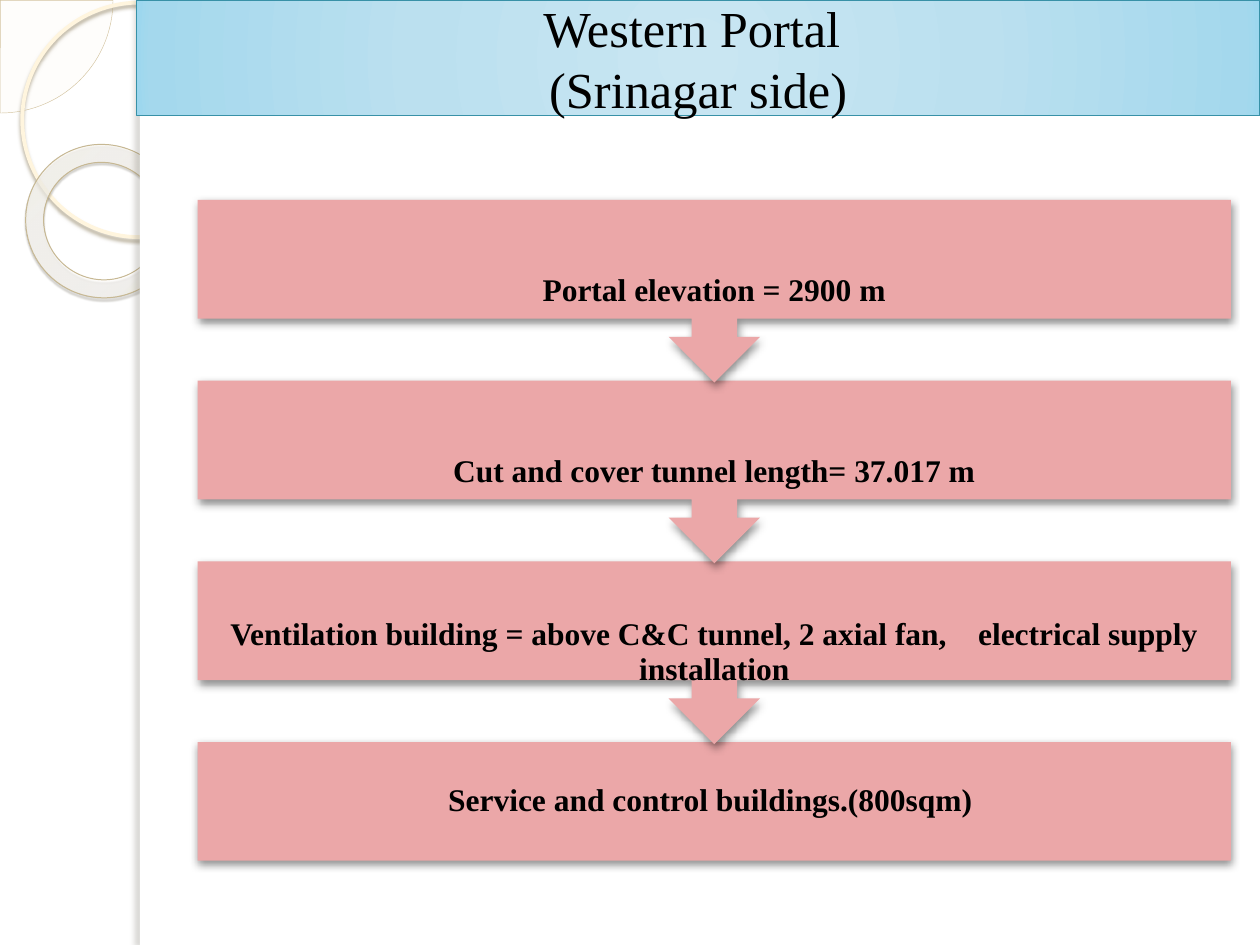
from dataclasses import dataclass
from lxml.etree import SubElement
from pptx import Presentation
from pptx.dml.color import RGBColor
from pptx.enum.shapes import MSO_SHAPE as Shape
from pptx.enum.text import MSO_ANCHOR as Anchor, PP_ALIGN as Align
from pptx.oxml.ns import qn
from pptx.util import Pt


@dataclass(frozen=True)
class Theme:
    font: str = "Times New Roman"
    title_size: float = 28.8
    body_size: float = 18
    text: str = "000000"
    paper: str = "FFFFFF"
    step: str = "EBA7A8"
    title_line: str = "3891A7"
    title_stops: tuple = ((0, "C9E6F2", 100), (50, "BBE0EF", 100),
                          (97, "A4D8ED", 100), (100, "9BD7EE", 100))
    pie: str = "FEFAF4"
    pie_line: str = "D3C39F"
    ring_line: str = "FFF5DE"
    donut_stops: tuple = ((0, "FFFCF6", 70), (70, "FFFEFB", 55), (100, "F0D28E", 60))
    donut_line: str = "C7B893"
    ring_shadow: tuple = ("B0A68F", 85, 2, 2, 90)
    donut_shadow: tuple = ("5A5444", 35, 1, 1.2, 75)
    edge_shadow: tuple = ("736F63", 25, 3, 3, 180)
    step_shadow: tuple = ("000000", 43, 5, 2, 90)


class SlideBuilder:
    def __init__(self, slide, theme):
        self.slide = slide
        self.theme = theme

    def add_color(self, parent, color, opacity):
        node = SubElement(parent, qn("a:srgbClr"), val=color)
        if opacity < 100:
            SubElement(node, qn("a:alpha"), val=str(opacity * 1000))

    def shape(self, kind, box, fill=None, opacity=100, line=None, shadow=None,
              adjustments=(), rotation=0):
        shape = self.slide.shapes.add_shape(kind, *map(Pt, box))
        shape.shadow.inherit = False
        shape.rotation = rotation
        for index, value in enumerate(adjustments):
            shape.adjustments[index] = value
        if fill:
            shape.fill.solid()
            solid = shape._element.spPr.find(qn("a:solidFill"))
            solid.clear()
            self.add_color(solid, fill, opacity)
        else:
            shape.fill.background()
        if line:
            color, width = line
            shape.line.color.rgb = RGBColor.from_string(color)
            shape.line.width = Pt(width)
        else:
            shape.line.fill.background()
        if shadow:
            self.shadow(shape, *shadow)
        return shape

    def shadow(self, shape, color, opacity, blur, distance, angle):
        effects = shape._element.spPr.find(qn("a:effectLst"))
        outer = SubElement(effects, qn("a:outerShdw"), blurRad=str(Pt(blur)),
                           dist=str(Pt(distance)), dir=str(angle * 60000),
                           rotWithShape="0")
        self.add_color(outer, color, opacity)

    def gradient(self, shape, stops, focus):
        properties = shape._element.spPr
        gradient = SubElement(properties, qn("a:gradFill"), rotWithShape="1")
        stop_list = SubElement(gradient, qn("a:gsLst"))
        for position, color, opacity in stops:
            stop = SubElement(stop_list, qn("a:gs"), pos=str(position * 1000))
            self.add_color(stop, color, opacity)
        circle = SubElement(gradient, qn("a:path"), {"path": "circle"})
        sides = {side: str(value * 1000) for side, value in zip("ltrb", focus)}
        SubElement(circle, qn("a:fillToRect"), sides)
        properties.replace(properties.find(qn("a:noFill")), gradient)

    def set_text(self, shape, text, size, bold=False, margin=0, spacing=1):
        frame = shape.text_frame
        frame_format = {"word_wrap": True, "vertical_anchor": Anchor.MIDDLE}
        for side in ("left", "top", "right", "bottom"):
            frame_format[f"margin_{side}"] = Pt(margin)
        for name, value in frame_format.items():
            setattr(frame, name, value)
        paragraph = frame.paragraphs[0]
        paragraph.text = text
        paragraph.alignment = Align.CENTER
        paragraph.line_spacing = spacing
        font_format = {"name": self.theme.font, "size": Pt(size), "bold": bold}
        for run in paragraph.runs:
            for name, value in font_format.items():
                setattr(run.font, name, value)
            run.font.color.rgb = RGBColor.from_string(self.theme.text)

    def ornaments(self):
        theme = self.theme
        self.shape(Shape.PIE, (-64.2, -64.2, 128.8, 128.8), theme.pie, 33,
                   (theme.pie_line, 0.25), adjustments=(0, 54.02))
        self.shape(Shape.OVAL, (12.7, 1.5, 134, 134), line=(theme.ring_line, 2.15),
                   shadow=theme.ring_shadow)
        donut = self.shape(Shape.DONUT, (14.4, 82.8, 88.6, 87.1),
                           line=(theme.donut_line, 0.58), shadow=theme.donut_shadow,
                           adjustments=(0.118,), rotation=38.6)
        self.gradient(donut, theme.donut_stops, (-408, -50, 508, 150))
        self.shape(Shape.RECTANGLE, (79.9, 0, 640.1, 540), theme.paper)
        self.shape(Shape.RECTANGLE, (79.9, 0, 5.8, 540), theme.paper,
                   shadow=theme.edge_shadow)

    def title(self, text):
        theme = self.theme
        banner = self.shape(Shape.RECTANGLE, (78, 0, 642, 66),
                            line=(theme.title_line, 0.75))
        self.gradient(banner, theme.title_stops, (50, 50, 50, 50))
        self.set_text(banner, text, theme.title_size)

    def step(self, text, top, height, leads_on):
        theme = self.theme
        box = (113, top, 590.4, height)
        kind, rotation = (Shape.UP_ARROW_CALLOUT, 180) if leads_on else (Shape.RECTANGLE, 0)
        self.shape(kind, box, theme.step, shadow=theme.step_shadow, rotation=rotation)
        label = self.slide.shapes.add_textbox(*map(Pt, box))
        self.set_text(label, text, theme.body_size, True, 10, 0.9)

    def flow(self, steps, top=114.2, pitch=103.3):
        last = len(steps) - 1
        for index in range(last, -1, -1):
            leads_on = index < last
            height = 104.4 if leads_on else 67.8
            self.step(steps[index], top + index * pitch, height, leads_on)


def main():
    presentation = Presentation()
    presentation.slide_width, presentation.slide_height = Pt(720), Pt(540)
    slide = presentation.slides.add_slide(presentation.slide_layouts[6])
    builder = SlideBuilder(slide, Theme())
    builder.ornaments()
    builder.title("Western Portal \v(Srinagar side)")
    builder.flow([
        "Portal elevation = 2900 m",
        "Cut and cover tunnel length= 37.017 m",
        "Ventilation building = above C&C tunnel, 2 axial fan,    electrical supply installation",
        "Service and control buildings.(800sqm) ",
    ])
    presentation.save("out.pptx")


if __name__ == "__main__":
    main()
